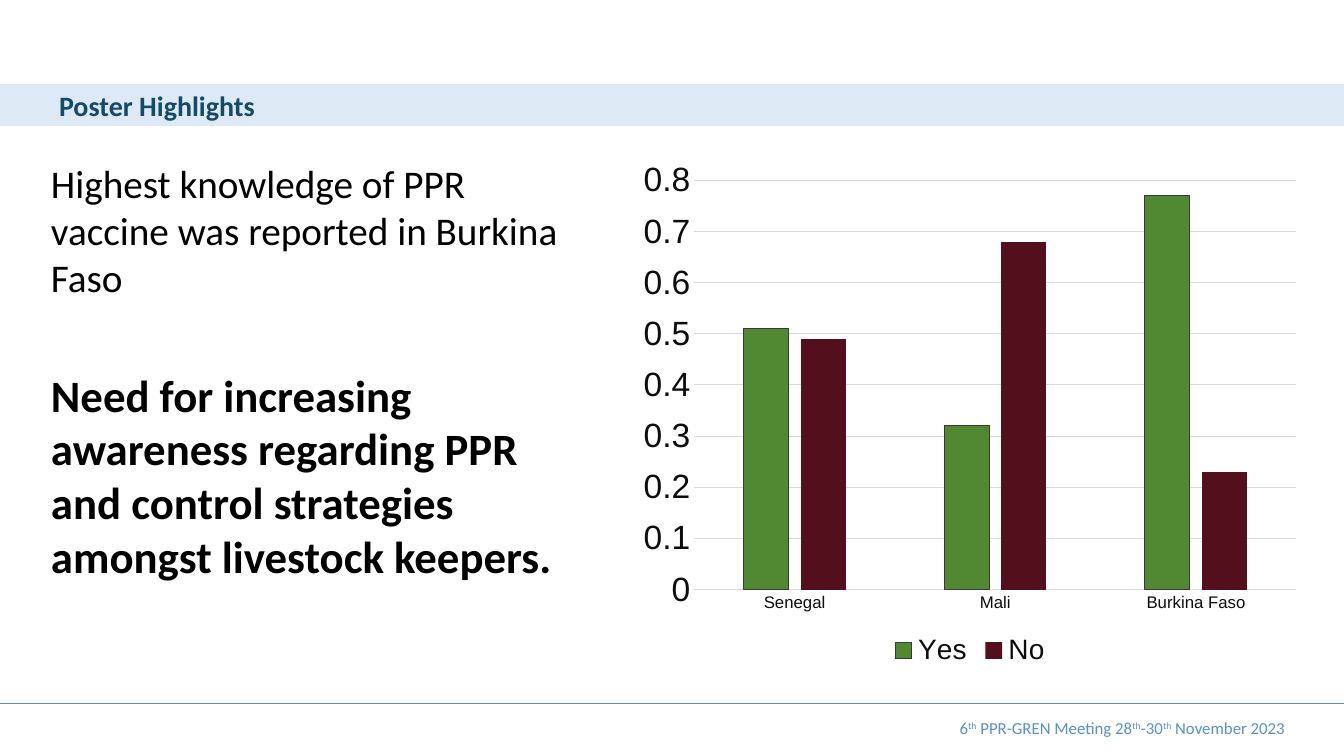
from pptx import Presentation
from pptx.chart.data import CategoryChartData
from pptx.dml.color import RGBColor
from pptx.enum.chart import XL_CHART_TYPE as ChartType, XL_LEGEND_POSITION as LegendPos, XL_TICK_MARK as Tick
from pptx.enum.shapes import MSO_CONNECTOR as Connector
from pptx.enum.text import MSO_ANCHOR as Anchor, MSO_AUTO_SIZE as AutoSize, PP_ALIGN as Align
from pptx.oxml.ns import qn
from pptx.util import Emu, Pt

BLACK = RGBColor(0x00, 0x00, 0x00)
INK = RGBColor(0x0D, 0x0D, 0x0D)
NAVY = RGBColor(0x14, 0x4B, 0x69)
BAND = RGBColor(0xDD, 0xE9, 0xF4)
FOOTER = RGBColor(0x57, 0x92, 0xC9)
RULE = RGBColor(0x57, 0x91, 0xC8)
GRID = RGBColor(0xD9, 0xD9, 0xD9)
GREEN = RGBColor(0x50, 0x89, 0x31)
MAROON = RGBColor(0x54, 0x0F, 0x1D)
OUTLINE = RGBColor(0x3B, 0x38, 0x38)


def px(*lengths):
    """Turn slide pixels (1344 across) into EMU."""
    return [Emu(round(n * 12192000 / 1344)) for n in lengths]


def set_font(font, size, color, name="Calibri", bold=False):
    values = {"size": Pt(size), "name": name, "bold": bold}
    for key, value in values.items():
        setattr(font, key, value)
    font.color.rgb = color


prs = Presentation()
prs.slide_width, prs.slide_height = px(1344, 756)
s = prs.slides.add_slide(prs.slide_layouts[5])

# Title band
title = s.shapes.title
title.left, title.top, title.width, title.height = px(0, 84, 1344, 42)
title.fill.solid()
title.fill.fore_color.rgb = BAND
title.text_frame.text = "Poster Highlights"

# Findings and footer
findings = s.shapes.add_textbox(*px(-8, 159, 638, 487))
footer = s.shapes.add_textbox(*px(857, 710, 487, 35))
frames = [
    (title, (59, 5, 10, 5), Anchor.MIDDLE),
    (findings, (59, 0, 39, 5), Anchor.TOP),
    (footer, (59, 5, 59, 5), Anchor.MIDDLE),
]
for sp, margins, anchor in frames:
    tf = sp.text_frame
    tf.word_wrap = True
    tf.auto_size = AutoSize.NONE
    tf.vertical_anchor = anchor
    tf.margin_left, tf.margin_top, tf.margin_right, tf.margin_bottom = px(*margins)

p = title.text_frame.paragraphs[0]
p.alignment = Align.LEFT
set_font(p.runs[0].font, 20, NAVY, bold=True)

tf = findings.text_frame
tf.text = ("Highest knowledge of PPR vaccine was reported in Burkina Faso\n"
           "Need for increasing awareness regarding PPR and control strategies amongst livestock keepers.")
for p, size, bold in zip(tf.paragraphs, (28, 32), (False, True)):
    set_font(p.runs[0].font, size, BLACK, bold=bold)
tf.paragraphs[1].space_before = Pt(48)

p = footer.text_frame.paragraphs[0]
p.alignment = Align.RIGHT
for text in ("6", "th", " PPR-GREN Meeting 28", "th", "-30", "th", " November 2023"):
    r = p.add_run()
    r.text = text
    set_font(r.font, 12, FOOTER)
    if text == "th":
        r.font._element.set("baseline", "30000")

rule = s.shapes.add_connector(Connector.STRAIGHT, *px(0, 703, 1344, 703))
rule.line.color.rgb = RULE
rule.line.width = Pt(0.5)
sp_pr = rule._element.spPr
sp_pr.append(sp_pr.makeelement(qn("a:effectLst"), {}))

# Vaccine knowledge by country
data = CategoryChartData()
data.categories = ["Senegal", "Mali", "Burkina Faso"]
data.add_series("Yes", (0.51, 0.32, 0.77))
data.add_series("No", (0.49, 0.68, 0.23))
chart = s.shapes.add_chart(ChartType.COLUMN_CLUSTERED, *px(630, 151, 680, 521), data).chart
chart.has_title = False
set_font(chart.font, 12, INK, "Arial")
chart.has_legend = True
chart.legend.position = LegendPos.BOTTOM
chart.legend.include_in_layout = False
set_font(chart.legend.font, 20, INK, "Arial")

for axis, size in ((chart.category_axis, 12), (chart.value_axis, 24)):
    axis.major_tick_mark = axis.minor_tick_mark = Tick.NONE
    set_font(axis.tick_labels.font, size, INK, "Arial")
value_axis = chart.value_axis
value_axis.minimum_scale, value_axis.maximum_scale, value_axis.major_unit = 0, 0.8, 0.1
value_axis.format.line.fill.background()
for line in (chart.category_axis.format.line, value_axis.major_gridlines.format.line):
    line.color.rgb = GRID
    line.width = Pt(0.75)

plot = chart.plots[0]
plot.vary_by_categories = False
plot.gap_width, plot.overlap = 219, -27
for series, color in zip(plot.series, (GREEN, MAROON)):
    series.format.fill.solid()
    series.format.fill.fore_color.rgb = color
yes_line = plot.series[0].format.line
yes_line.color.rgb = OUTLINE
yes_line.width = Pt(0.75)

prs.save("out.pptx")
